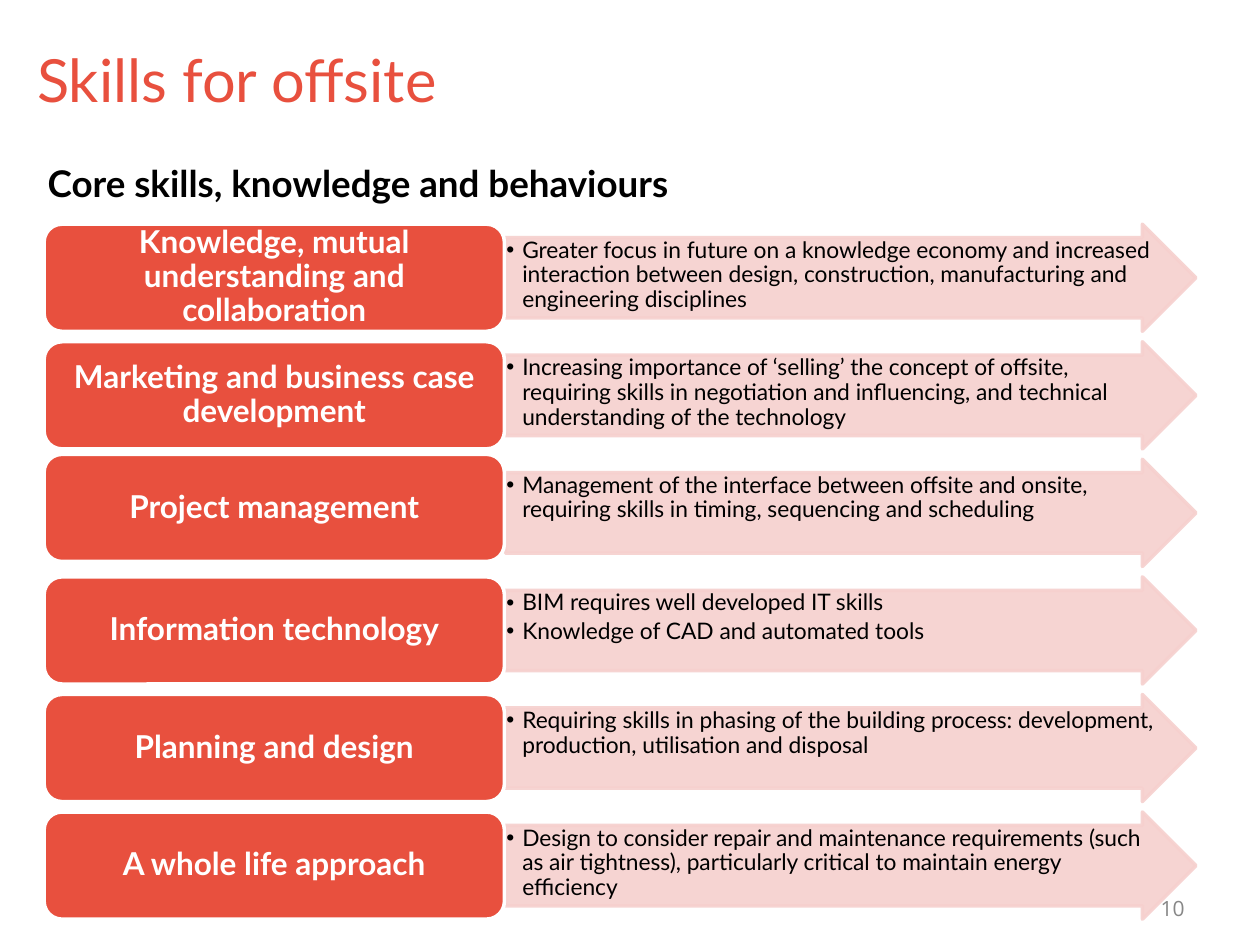
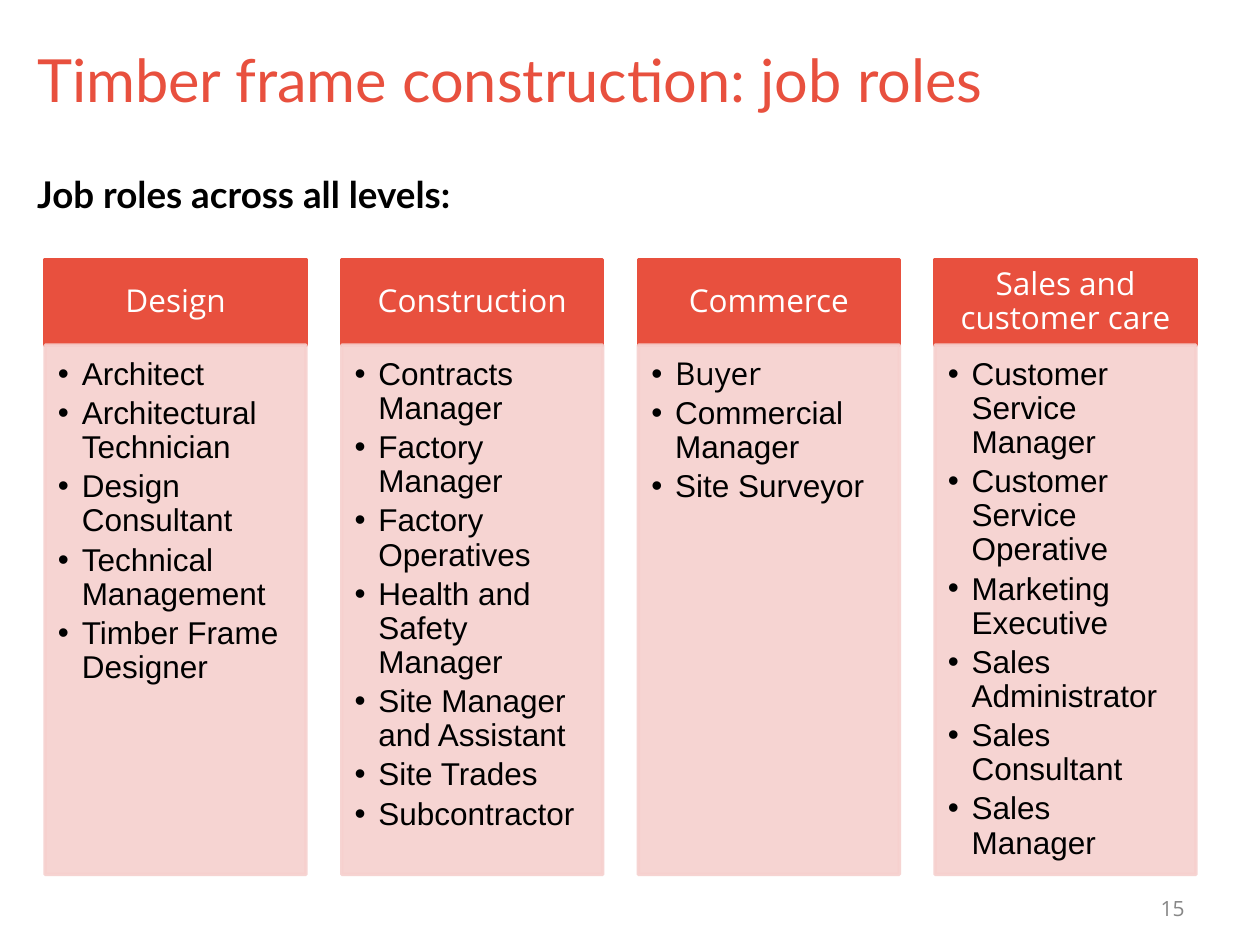
"""Build two slides on skills and job roles in offsite construction."""
import lxml.etree
import pptx
import pptx.util
import pptx.dml.color
import pptx.enum.shapes
import pptx.enum.text
import pptx.oxml.ns

Cm = pptx.util.Cm
Pt = pptx.util.Pt
SHAPE = pptx.enum.shapes.MSO_SHAPE
ALIGN = pptx.enum.text.PP_ALIGN
ANCHOR = pptx.enum.text.MSO_ANCHOR

COLORS = {
    "accent": "E8503E",
    "tint": "F6D0CE",
    "text": "000000",
    "white": "FFFFFF",
    "number": "878787",
}

SKILLS = [
    ("Knowledge, mutual understanding and collaboration",
     ["Greater focus in future on a knowledge economy and increased interaction "
      "between design, construction, manufacturing and engineering disciplines"]),
    ("Marketing and business case development",
     ["Increasing importance of ‘selling’ the concept of offsite, requiring skills "
      "in negotiation and influencing, and technical understanding of the technology"]),
    ("Project management",
     ["Management of the interface between offsite and onsite, requiring skills "
      "in timing, sequencing and scheduling"]),
    ("Information technology",
     ["BIM requires well developed IT skills",
      "Knowledge of CAD and automated tools"]),
    ("Planning and design",
     ["Requiring skills in phasing of the building process: development, "
      "production, utilisation and disposal"]),
    ("A whole life approach",
     ["Design to consider repair and maintenance requirements (such as air "
      "tightness), particularly critical to maintain energy efficiency"]),
]

ROLES = {
    "Design": ["Architect", "Architectural Technician", "Design Consultant",
               "Technical Management", "Timber Frame Designer"],
    "Construction": ["Contracts Manager", "Factory Manager", "Factory Operatives",
                     "Health and Safety Manager", "Site Manager and Assistant",
                     "Site Trades", "Subcontractor"],
    "Commerce": ["Buyer", "Commercial Manager", "Site Surveyor"],
    "Sales and customer care": ["Customer Service Manager",
                                "Customer Service Operative",
                                "Marketing Executive", "Sales Administrator",
                                "Sales Consultant", "Sales Manager"],
}
ROLE_FONTS = {"Buyer": "Open Sans"}


def rgb(name):
    return pptx.dml.color.RGBColor.from_string(COLORS[name])


def add_xml(parent, tag, key, value):
    lxml.etree.SubElement(parent, pptx.oxml.ns.qn(tag)).set(key, value)


def write(tf, text, font="Lato", size=18, color="text", bold=False,
          align=ALIGN.LEFT, spacing=None, indent=None):
    p = tf.paragraphs[-1]
    if p.runs:
        p = tf.add_paragraph()
    p.alignment = align
    p.line_spacing = spacing
    if indent:
        p.space_after = Pt(round(size * 0.15))
        pPr = p._p.get_or_add_pPr()
        pPr.set("marL", str(int(Cm(indent))))
        pPr.set("indent", str(-int(Cm(indent))))
        add_xml(pPr, "a:buFont", "typeface", "Arial")
        add_xml(pPr, "a:buChar", "char", "•")
    r = p.add_run()
    r.text = text
    r.font.name = font
    r.font.size = Pt(size)
    r.font.bold = bold
    r.font.color.rgb = rgb(color)


class Deck:
    def __init__(self):
        self.prs = pptx.Presentation()
        self.prs.slide_width = Cm(25.4)
        self.prs.slide_height = Cm(19.05)
        self.s = None

    def frame(self, sp, insets, anchor=ANCHOR.TOP, wrap=True):
        tf = sp.text_frame
        tf.word_wrap = wrap
        tf.auto_size = pptx.enum.text.MSO_AUTO_SIZE.NONE
        tf.vertical_anchor = anchor
        (tf.margin_left, tf.margin_top,
         tf.margin_right, tf.margin_bottom) = map(Cm, insets)
        return tf

    def slide(self, title, number):
        self.s = self.prs.slides.add_slide(self.prs.slide_layouts[5])
        sp = self.s.shapes.title
        sp.left, sp.top, sp.width, sp.height = map(Cm, (0.5, 0.74, 24.2, 2.39))
        write(self.frame(sp, (0.25, 0.13, 0.25, 0.13)), title,
              size=34, color="accent")
        self.textbox((23.34, 17.93, 0.79, 0.74), str(number), anchor=ANCHOR.MIDDLE,
                     wrap=False, font="Open Sans", size=12, color="number",
                     align=ALIGN.RIGHT)

    def textbox(self, box, text, anchor=ANCHOR.TOP, wrap=True, **fmt):
        sp = self.s.shapes.add_textbox(*map(Cm, box))
        write(self.frame(sp, (0.25, 0.13, 0.25, 0.13), anchor, wrap), text, **fmt)

    def subtitle(self, left, top, text):
        self.textbox((left, top, 18.6, 2), text, size=21, bold=True)

    def shape(self, kind, box, fill, line):
        sp = self.s.shapes.add_shape(kind, *map(Cm, box))
        sp.shadow.inherit = False
        sp.fill.solid()
        sp.fill.fore_color.rgb = rgb(fill)
        sp.line.color.rgb = rgb(line)
        sp.line.width = Pt(2)
        return sp

    def heading(self, kind, box, text, insets, line="accent", **fmt):
        sp = self.shape(kind, box, "accent", line)
        write(self.frame(sp, insets, ANCHOR.MIDDLE), text, color="white",
              align=ALIGN.CENTER, spacing=0.9, **fmt)

    def bullets(self, kind, box, items, insets, fonts=None, font="Lato", **fmt):
        sp = self.shape(kind, box, "tint", "tint")
        if kind == SHAPE.RIGHT_ARROW:
            sp.adjustments[0] = 0.75
        for clr in sp._element.spPr.iter(pptx.oxml.ns.qn("a:srgbClr")):
            add_xml(clr, "a:alpha", "val", "90000")
        tf = self.frame(sp, insets)
        for item in items:
            write(tf, item, font=(fonts or {}).get(item, font), spacing=0.9, **fmt)


def skills_slide(deck):
    deck.slide("Skills for offsite", 10)
    deck.subtitle(0.71, 3.12, "Core skills, knowledge and behaviours")
    top, pitch, height = 4.52, 2.37, 2.16
    for i, (skill, details) in enumerate(SKILLS):
        y = top + i * pitch
        deck.bullets(SHAPE.RIGHT_ARROW, (10.19, y, 13.92, height), details,
                     (0.02, 0.02, 0.02, 0.02), size=13, indent=0.32)
        nudge = 0.1 if skill == "Project management" else 0
        deck.heading(SHAPE.ROUNDED_RECTANGLE, (0.89, y - nudge, 9.28, height), skill,
                     (0.18, 0.1, 0.18, 0.1), line="white", bold=True)


def roles_slide(deck):
    deck.slide("Timber frame construction: job roles", 15)
    deck.subtitle(0.5, 3.33, "Job roles across all levels:")
    left, pitch, width = 0.91, 5.98, 5.26
    top, head, body = 5.23, 1.73, 10.67
    for i, (area, roles) in enumerate(ROLES.items()):
        x = left + i * pitch
        deck.heading(SHAPE.RECTANGLE, (x, top, width, head), area,
                     (0.35, 0.2, 0.35, 0.2), font="Open Sans")
        deck.bullets(SHAPE.RECTANGLE, (x, top + head, width, body), roles,
                     (0.26, 0.26, 0.35, 0.4), fonts=ROLE_FONTS, font="Arial",
                     indent=0.48)


def main():
    deck = Deck()
    skills_slide(deck)
    roles_slide(deck)
    deck.prs.save("out.pptx")


if __name__ == "__main__":
    main()
